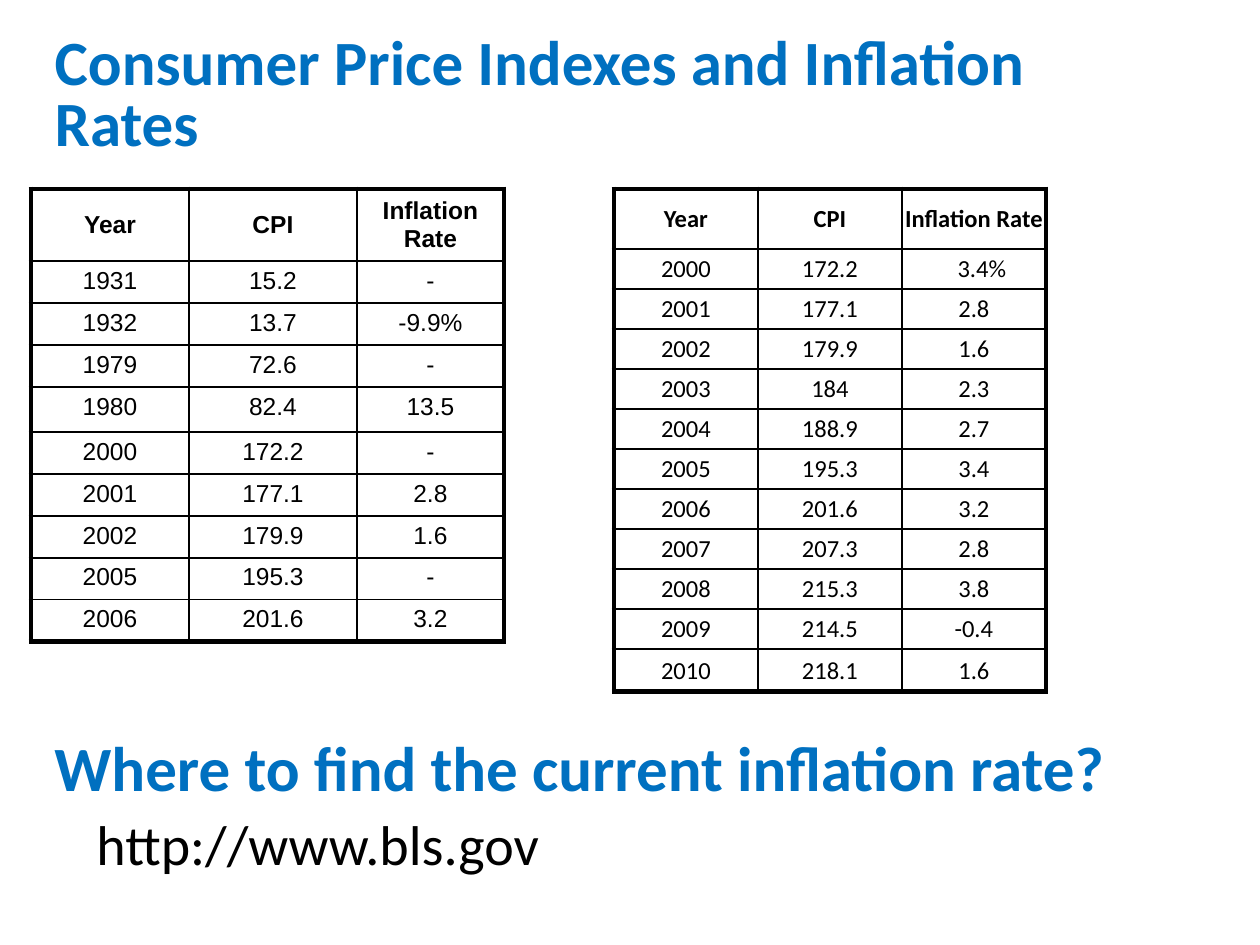
from lxml.etree import SubElement
from pptx import Presentation
from pptx.dml.color import RGBColor
from pptx.enum.text import MSO_ANCHOR as Anchor, MSO_AUTO_SIZE as AutoSize, PP_ALIGN as Align
from pptx.oxml.ns import qn
from pptx.util import Emu, Pt

EMU_PER_PX = 914400 / 126
COLORS = {"heading": "0070C0", "ink": "000000"}
HEADER = ["Year", "CPI", "Inflation Rate"]
SELECTED_YEARS = [
    ["1931", "15.2", "-"],
    ["1932", "13.7", "-9.9%"],
    ["1979", "72.6", "-"],
    ["1980", "82.4", "13.5"],
    ["2000", "172.2", "-"],
    ["2001", "177.1", "2.8"],
    ["2002", "179.9", "1.6"],
    ["2005", "195.3", "-"],
    ["2006", "201.6", "3.2"],
]
RECENT_YEARS = [
    ["2000", "172.2", "3.4%"],
    ["2001", "177.1", "2.8"],
    ["2002", "179.9", "1.6"],
    ["2003", "184", "2.3"],
    ["2004", "188.9", "2.7"],
    ["2005", "195.3", "3.4"],
    ["2006", "201.6", "3.2"],
    ["2007", "207.3", "2.8"],
    ["2008", "215.3", "3.8"],
    ["2009", "214.5", "-0.4"],
    ["2010", "218.1", "1.6"],
]


def px(length):
    """Turn whole pixels into EMU."""
    return Emu(round(length * EMU_PER_PX))


def write(frame, text, size=14, font="Calibri", color="ink", bold=False,
          align=Align.LEFT, line_spacing=None):
    """Put one formatted paragraph into a text frame."""
    para = frame.paragraphs[0]
    para.alignment = align
    para.line_spacing = line_spacing
    span = para.add_run()
    span.text = text
    span.font.size = Pt(size)
    span.font.name = font
    span.font.bold = bold
    span.font.color.rgb = RGBColor.from_string(COLORS[color])


def add_line(box, text, **style):
    """Set up a growing text frame with tight line spacing."""
    frame = box.text_frame
    frame.word_wrap = True
    frame.auto_size = AutoSize.SHAPE_TO_FIT_TEXT
    write(frame, text, line_spacing=0.8, **style)
    return frame


def add_title(page, text, bounds, **style):
    """Fill and place the title placeholder."""
    title = page.shapes.title
    title.left, title.top, title.width, title.height = map(px, bounds)
    add_line(title, text, **style).vertical_anchor = Anchor.MIDDLE


def add_text(page, text, bounds, anchor=Anchor.TOP, **style):
    """Add a text box with one line."""
    box = page.shapes.add_textbox(*map(px, bounds))
    add_line(box, text, **style).vertical_anchor = anchor


def set_borders(cell, **widths):
    """Draw the cell borders, given as points by side letter."""
    properties = cell._tc.get_or_add_tcPr()
    for side in "LRTB":
        line = SubElement(properties, qn(f"a:ln{side}"), w=str(Pt(widths[side])))
        fill = SubElement(line, qn("a:solidFill"))
        SubElement(fill, qn("a:srgbClr"), val=COLORS["ink"])


def add_price_table(page, left, top, columns, heights, records, font, margins, anchor, indents=()):
    """Add a ruled table with a thick frame and a bold header."""
    rows = [HEADER] + records
    table = page.shapes.add_table(len(rows), len(columns), px(left), px(top),
                                  px(sum(columns)), px(sum(heights))).table
    table.first_row = table.horz_banding = False
    for column, width in zip(table.columns, columns):
        column.width = px(width)
    last_row, last_column = len(rows) - 1, len(columns) - 1
    for r, (record, height) in enumerate(zip(rows, heights)):
        table.rows[r].height = px(height)
        for c, text in enumerate(record):
            cell = table.cell(r, c)
            (cell.margin_left, cell.margin_top,
             cell.margin_right, cell.margin_bottom) = map(px, margins)
            if text in indents:
                cell.margin_left = px(margins[0] + 16)
            cell.vertical_anchor = Anchor.MIDDLE if r == 0 else anchor
            set_borders(cell, L=3 if c == 0 else 1, R=3 if c == last_column else 1,
                        T=3 if r == 0 else 1, B=3 if r == last_row else 1)
            cell.fill.background()
            write(cell.text_frame, text, font=font, bold=r == 0, align=Align.CENTER)


def main():
    """Build the slide and save the deck."""
    deck = Presentation()
    deck.slide_width, deck.slide_height = px(1260), px(945)
    page = deck.slides.add_slide(deck.slide_layouts[5])
    heading = {"size": 36, "color": "heading", "bold": True}
    add_title(page, "Consumer Price Indexes and Inflation Rates", (42, 30, 1071, 136), **heading)
    add_price_table(page, 31, 189, [158, 168, 147], [72] + [42] * 3 + [45] + [42] * 5,
                    SELECTED_YEARS, "Arial", (13, 6, 13, 6), Anchor.TOP)
    add_text(page, "Where to find the current inflation rate?", (42, 735, 1176, 76),
             anchor=Anchor.MIDDLE, **heading)
    add_text(page, "http://www.bls.gov", (84, 816, 1050, 68), size=32)
    add_price_table(page, 614, 189, [144] * 3, [60] + [40] * 10 + [43],
                    RECENT_YEARS, "Calibri", (1, 1, 1, 0), Anchor.MIDDLE, indents=("3.4%",))
    deck.save("out.pptx")


if __name__ == "__main__":
    main()
